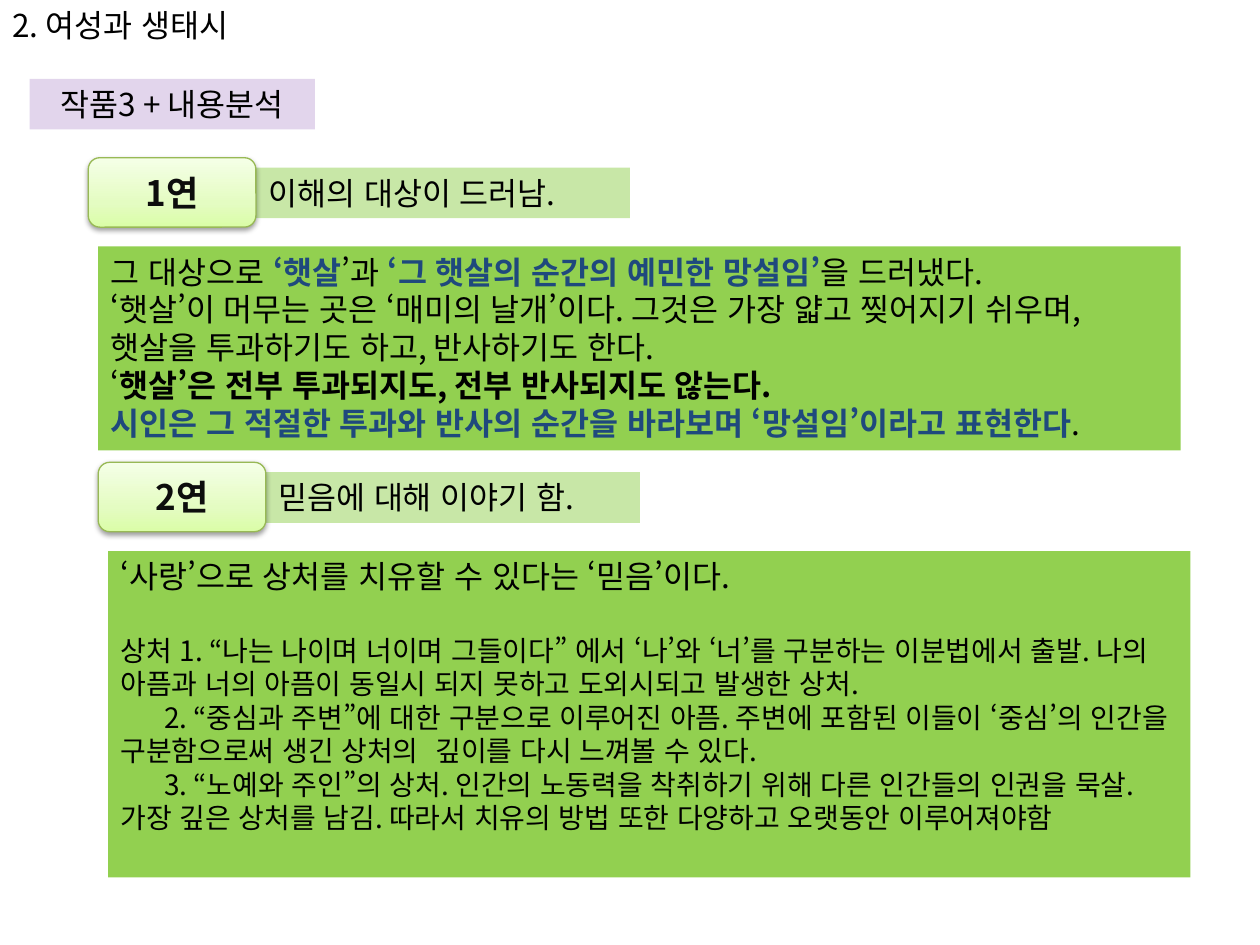
from copy import deepcopy

from lxml import etree
from pptx import Presentation
from pptx.dml.color import RGBColor
from pptx.enum.lang import MSO_LANGUAGE_ID
from pptx.enum.shapes import MSO_SHAPE
from pptx.enum.text import MSO_ANCHOR, PP_ALIGN
from pptx.oxml.ns import qn
from pptx.util import Cm, Pt

KOREAN = MSO_LANGUAGE_ID.KOREAN
ROUNDED = MSO_SHAPE.ROUNDED_RECTANGLE
MIDDLE = MSO_ANCHOR.MIDDLE
CENTER = PP_ALIGN.CENTER

COLORS = {
    "text": "000000",
    "badge_text": "0D0D0D",
    "accent": "1F497D",
    "purple": "7030A0",
    "green": "92D050",
    "badge_line": "98B955",
    "shadow": "000000",
}
BADGE_STOPS = [(0, "DAFDA7"), (0.35, "E4FCC2"), (1, "F5FFE7")]


class SlideBuilder:
    font = "Noto Sans CJK KR"

    def __init__(self, slide):
        self.slide = slide

    def add_run(self, paragraph, text, size=18, color="text", bold=False):
        run = paragraph.add_run()
        run.text = text
        run.font.size = Pt(size)
        run.font.bold = bold
        run.font.name = self.font
        run.font.language_id = KOREAN
        run.font.color.rgb = RGBColor.from_string(COLORS[color])
        properties = run.font._element
        etree.SubElement(properties, qn("a:ea"), typeface=self.font)

    def add_box(self, left, top, width, height, paragraphs, fill=None,
                opacity=100, align=None, wrap=True, parent=None):
        """Each paragraph is (runs, format); each run is (text, style)."""
        shapes = (parent or self.slide).shapes
        box = shapes.add_textbox(Cm(left), Cm(top), Cm(width), Cm(height))
        if fill:
            box.fill.solid()
            box.fill.fore_color.rgb = RGBColor.from_string(COLORS[fill])
            if opacity < 100:
                color = box._element.spPr.find(".//" + qn("a:srgbClr"))
                etree.SubElement(color, qn("a:alpha"), val=str(opacity * 1000))
        frame = box.text_frame
        frame.word_wrap = wrap
        for index, (runs, layout) in enumerate(paragraphs):
            paragraph = frame.add_paragraph() if index else frame.paragraphs[0]
            paragraph.alignment = align
            if "before" in layout:
                paragraph.space_before = Pt(layout["before"])
            if "indent" in layout:
                properties = paragraph._p.get_or_add_pPr()
                properties.set("marL", "0")
                properties.set("indent", str(Cm(layout["indent"])))
            for text, style in runs:
                self.add_run(paragraph, text, **style)

    def add_badge(self, left, top, width, height, text, parent):
        badge = parent.shapes.add_shape(
            ROUNDED, Cm(left), Cm(top), Cm(width), Cm(height))
        # Three-step gradient, darkest at the bottom
        badge.fill.gradient()
        badge.fill.gradient_angle = 90
        stop_list = badge._element.spPr.find(".//" + qn("a:gsLst"))
        stop_list.append(deepcopy(stop_list[0]))
        for stop, (position, color) in zip(badge.fill.gradient_stops, BADGE_STOPS):
            stop.position = position
            stop.color.rgb = RGBColor.from_string(color)
        badge.line.color.rgb = RGBColor.from_string(COLORS["badge_line"])
        badge.line.width = Pt(0.75)
        # Soft shadow below
        badge.shadow.inherit = False
        effects = badge._element.spPr.find(qn("a:effectLst"))
        shadow = etree.SubElement(
            effects, qn("a:outerShdw"), blurRad=str(Pt(3.1)), dist=str(Pt(1.6)),
            dir="5400000", rotWithShape="0")
        color = etree.SubElement(shadow, qn("a:srgbClr"), val=COLORS["shadow"])
        etree.SubElement(color, qn("a:alpha"), val="38000")
        # Label
        frame = badge.text_frame
        frame.word_wrap = True
        frame.vertical_anchor = MIDDLE
        frame.paragraphs[0].alignment = CENTER
        self.add_run(frame.paragraphs[0], text, 20, "badge_text", True)

    def add_stanza(self, left, top, label, heading, body, body_height):
        group = self.slide.shapes.add_group_shape()
        self.add_box(left + 3.38, top + 0.2, 7.54, 1.02, [plain(heading)],
                     "green", 50, parent=group)
        self.add_badge(left, top, 3.38, 1.4, label, group)
        self.add_box(left + 0.2, top + 1.79, 21.82, body_height, body, "green")


def plain(text, size=18, **layout):
    return [(text, {"size": size})], layout


ACCENT = {"color": "accent", "bold": True}
STANZA_1 = [
    ([("그 대상으로 ", {}), ("‘햇살", ACCENT), ("’과 ", {}),
      ("‘그 햇살의 순간의 예민한 망설임’", ACCENT), ("을 드러냈다.", {})], {}),
    plain("‘햇살’이 머무는 곳은 ‘매미의 날개’이다. 그것은 가장 얇고 찢어지기 쉬우며, "
          "햇살을 투과하기도 하고, 반사하기도 한다."),
    ([("‘", {}),
      ("햇살’은 전부 투과되지도, 전부 반사되지도 않는다.", {"bold": True})], {}),
    ([("시인은 그 적절한 투과와 반사의 순간을 바라보며 ‘망설임’이라고 표현한다", ACCENT),
      (".", {})], {}),
]
STANZA_2 = [
    plain("‘사랑’으로 상처를 치유할 수 있다는 ‘믿음’이다."),
    plain("상처 1. “나는 나이며 너이며 그들이다” 에서 ‘나’와 ‘너’를 구분하는 이분법에서 출발. "
          "나의 아픔과 너의 아픔이 동일시 되지 못하고 도외시되고 발생한 상처.",
          16, before=21.7),
    plain("2. “중심과 주변”에 대한 구분으로 이루어진 아픔. 주변에 포함된 이들이 ‘중심’의 "
          "인간을 구분함으로써 생긴 상처의 \t깊이를 다시 느껴볼 수 있다.", 16, indent=0.88),
    plain("3. “노예와 주인”의 상처. 인간의 노동력을 착취하기 위해 다른 인간들의 인권을 묵살. "
          "가장 깊은 상처를 남김. 따라서 치유의 방법 또한 다양하고 오랫동안 이루어져야함",
          16, indent=0.88),
]


def main():
    presentation = Presentation()
    presentation.slide_width = Cm(25.4)
    presentation.slide_height = Cm(19.05)
    slide = presentation.slides.add_slide(presentation.slide_layouts[6])
    builder = SlideBuilder(slide)

    # Titles
    builder.add_box(0, 0, 5.49, 1.02, [plain("2. 여성과 생태시")], wrap=False)
    builder.add_box(0.6, 1.59, 5.75, 1.02, [plain("작품3 + 내용분석")],
                    "purple", 20, CENTER)

    # Stanzas
    builder.add_stanza(1.78, 3.18, "1연", "이해의 대상이 드러남.", STANZA_1, 4.11)
    builder.add_stanza(1.98, 9.32, "2연", "믿음에 대해 이야기 함.", STANZA_2, 6.58)

    presentation.save("out.pptx")


if __name__ == "__main__":
    main()
